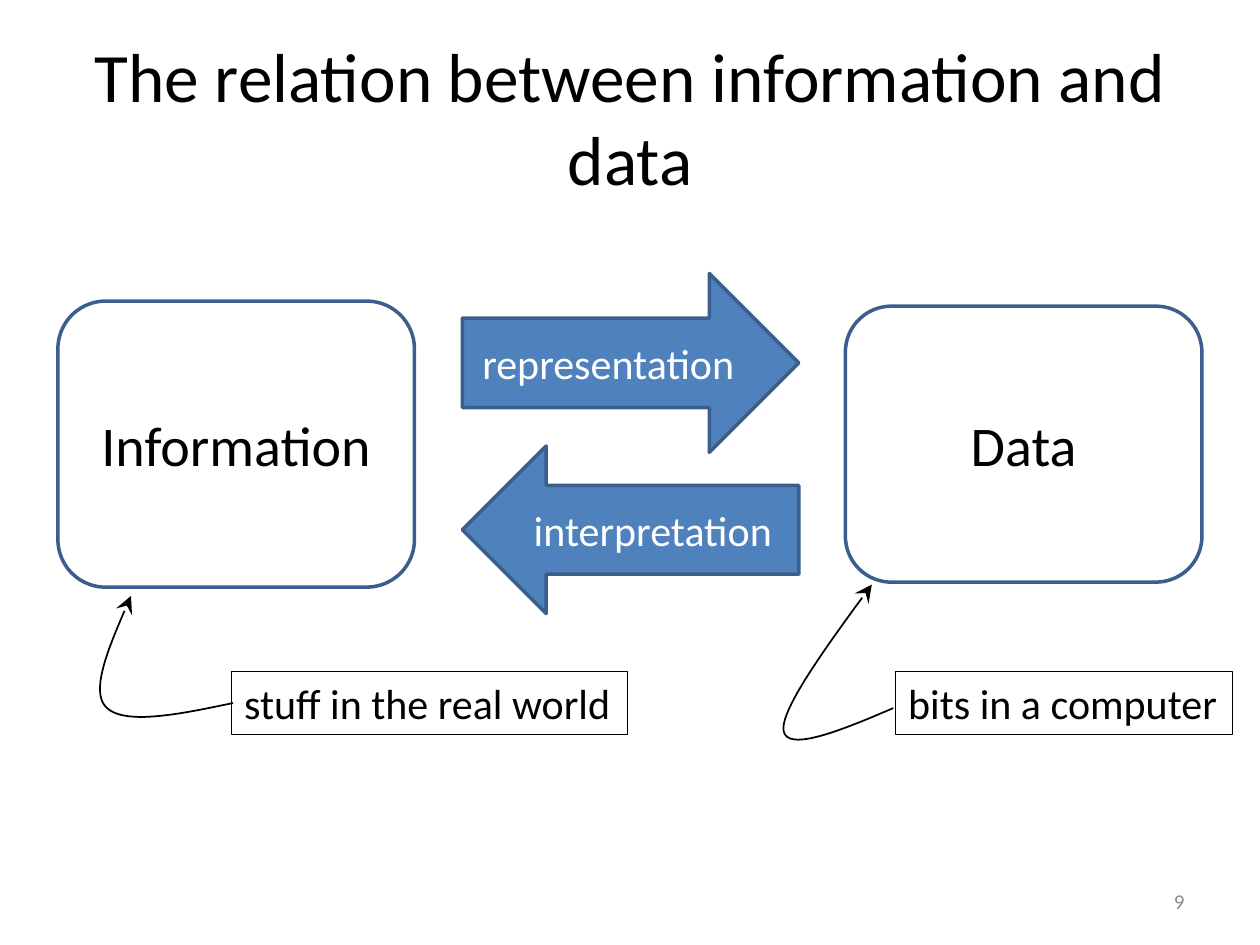
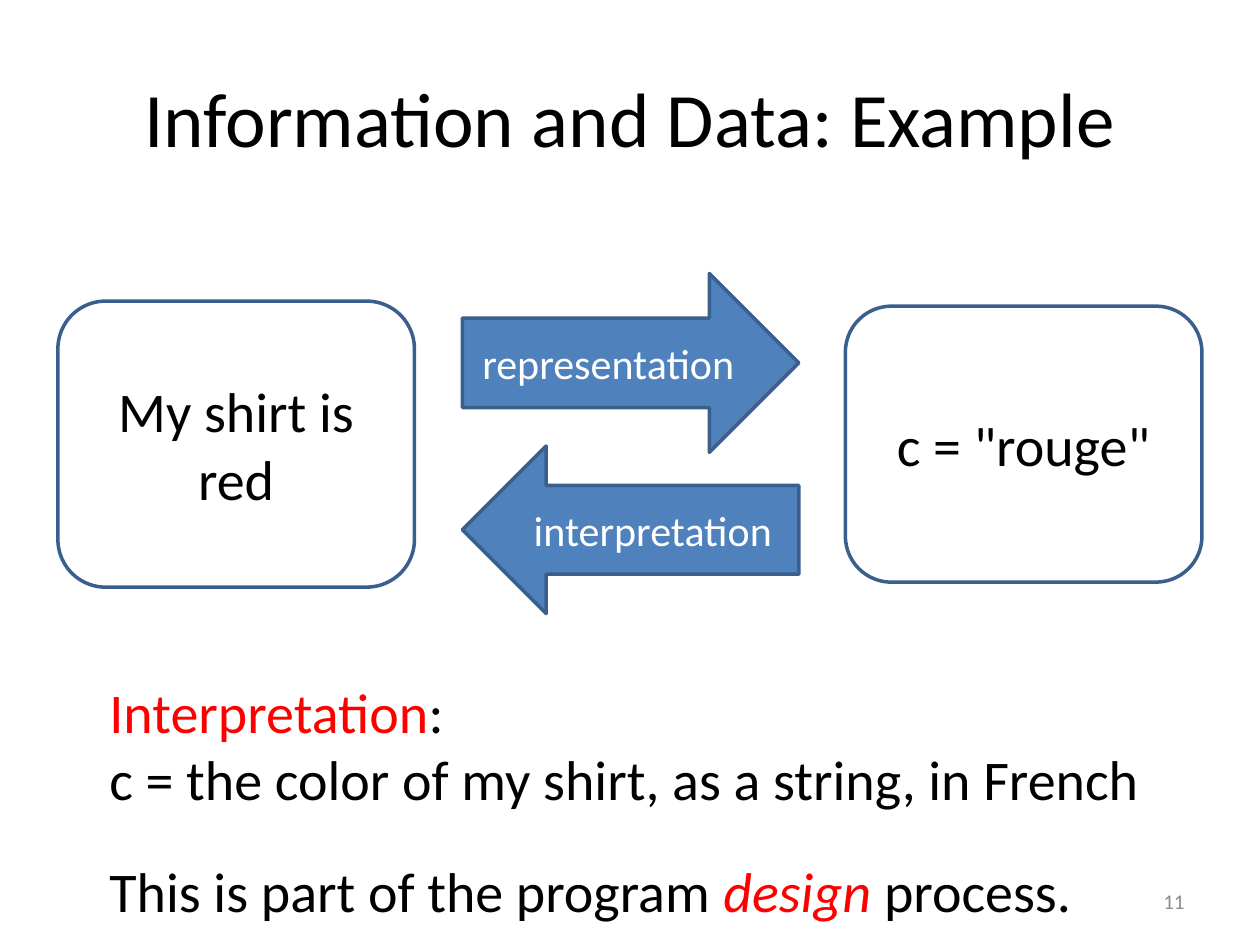
from pptx import Presentation
from pptx.dml.color import RGBColor
from pptx.enum import shapes, text
from pptx.oxml import ns
from pptx.util import Inches, Pt
from lxml import etree

BLACK = RGBColor(0x00, 0x00, 0x00)
WHITE = RGBColor(0xFF, 0xFF, 0xFF)
RED = RGBColor(0xFF, 0x00, 0x00)
GRAY = RGBColor(0x8C, 0x8C, 0x8C)
BLUE = RGBColor(0x4F, 0x81, 0xBD)
DARK_BLUE = RGBColor(0x3A, 0x5F, 0x8C)

FONT = "Calibri"
LEFT, CENTER, RIGHT = text.PP_ALIGN.LEFT, text.PP_ALIGN.CENTER, text.PP_ALIGN.RIGHT
CURVE_STEPS = 24


def bezier(start, control_1, control_2, end):
    """Points along a cubic curve, without its start."""
    points = (start, control_1, control_2, end)
    for step in range(1, CURVE_STEPS + 1):
        t = step / CURVE_STEPS
        weights = ((1 - t) ** 3, 3 * t * (1 - t) ** 2, 3 * t ** 2 * (1 - t), t ** 3)
        yield tuple(Inches(sum(w * point[axis] for w, point in zip(weights, points)))
                    for axis in (0, 1))


class Deck:
    """Holds the presentation, its style and the current slide."""

    def __init__(self):
        self.presentation = Presentation()
        self.presentation.slide_width = Inches(10)
        self.presentation.slide_height = Inches(7.5)
        self.slide = None

    def add_slide(self, title, number, title_size=44):
        self.slide = self.presentation.slides.add_slide(self.presentation.slide_layouts[6])
        self.text_box((0.5, 0.3, 9, 1.25), [[(title, BLACK)]], title_size, CENTER, wrap=True)
        self.text_box((7.17, 6.95, 2.33, 0.4), [[(number, GRAY)]], 12, RIGHT, wrap=True)

    def set_text(self, shape, paragraphs, size, align, wrap=True):
        """Fill a shape with paragraphs, each a list of (words, colour[, italic])."""
        frame = shape.text_frame
        frame.word_wrap = wrap
        frame.vertical_anchor = text.MSO_ANCHOR.MIDDLE if wrap else text.MSO_ANCHOR.TOP
        for index, runs in enumerate(paragraphs):
            paragraph = frame.add_paragraph() if index else frame.paragraphs[0]
            paragraph.alignment = align
            for words, color, *italic in runs:
                run = paragraph.add_run()
                run.text = words
                run.font.name = FONT
                run.font.size = Pt(size)
                run.font.color.rgb = color
                run.font.italic = any(italic)

    def text_box(self, box, paragraphs, size, align=LEFT, wrap=False):
        shape = self.slide.shapes.add_textbox(*map(Inches, box))
        self.set_text(shape, paragraphs, size, align, wrap)
        return shape

    def label(self, box, words):
        shape = self.text_box(box, [[(words, BLACK)]], 24)
        shape.line.color.rgb = BLACK
        shape.line.width = Pt(0.75)

    def block(self, kind, box, words, size, color, fill=None):
        shape = self.slide.shapes.add_shape(kind, *map(Inches, box))
        shape.shadow.inherit = False
        if fill is None:
            shape.fill.background()
        else:
            shape.fill.solid()
            shape.fill.fore_color.rgb = fill
        shape.line.color.rgb = DARK_BLUE
        shape.line.width = Pt(2)
        self.set_text(shape, [[(words, color)]], size, CENTER)
        return shape

    def relation(self, information, data):
        """Two boxes joined by the representation and interpretation arrows."""
        kinds = shapes.MSO_SHAPE
        for box, words in (((0.46, 2.39, 2.83, 2.27), information),
                           ((6.71, 2.43, 2.83, 2.19), data)):
            self.block(kinds.ROUNDED_RECTANGLE, box, words, 32, BLACK)
        self.block(kinds.RIGHT_ARROW, (3.67, 2.17, 2.67, 1.42), "representation",
                   24, WHITE, BLUE)
        back = self.block(kinds.LEFT_ARROW, (3.67, 3.54, 2.67, 1.33), "interpretation",
                          24, WHITE, BLUE)
        back.adjustments[0] = 0.53

    def curved_arrow(self, start, *curves):
        """Draw joined cubic curves, each (control, control, end), with an arrowhead."""
        builder = self.slide.shapes.build_freeform(*map(Inches, start))
        for curve in curves:
            builder.add_line_segments(list(bezier(start, *curve)), close=False)
            start = curve[-1]
        shape = builder.convert_to_shape()
        shape.shadow.inherit = False
        shape.fill.background()
        shape.line.color.rgb = BLACK
        shape.line.width = Pt(1)
        line = shape.element.spPr.find(ns.qn("a:ln"))
        etree.SubElement(line, ns.qn("a:tailEnd"), type="stealth", w="lg", len="lg")


def main():
    deck = Deck()

    deck.add_slide("The relation between information and data", "9", title_size=39.6)
    deck.relation("Information", "Data")
    deck.label((1.84, 5.33, 3.14, 0.5), "stuff in the real world")
    deck.label((7.11, 5.33, 2.67, 0.5), "bits in a computer")
    deck.curved_arrow((1.85, 5.58),
                      ((1.42, 5.67), (0.98, 5.76), (0.84, 5.61)),
                      ((0.71, 5.47), (0.88, 5.1), (1.04, 4.73)))
    deck.curved_arrow((7.09, 5.62),
                      ((6.67, 5.8), (6.25, 5.97), (6.22, 5.8)),
                      ((6.19, 5.64), (6.55, 5.14), (6.92, 4.64)))

    deck.add_slide("Information and Data: Example", "11")
    deck.relation("My shirt is red", 'c = "rouge"')
    deck.text_box((0.77, 5.33, 8.46, 1.18),
                  [[("Interpretation", RED), (":", BLACK)],
                   [("c = the color of my shirt, as a string, in French", BLACK)]], 32)
    deck.text_box((0.77, 6.75, 7.91, 0.64),
                  [[("This is part of the program ", BLACK), ("design", RED, True),
                    (" process.", BLACK)]], 32)

    deck.presentation.save("out.pptx")


if __name__ == "__main__":
    main()
